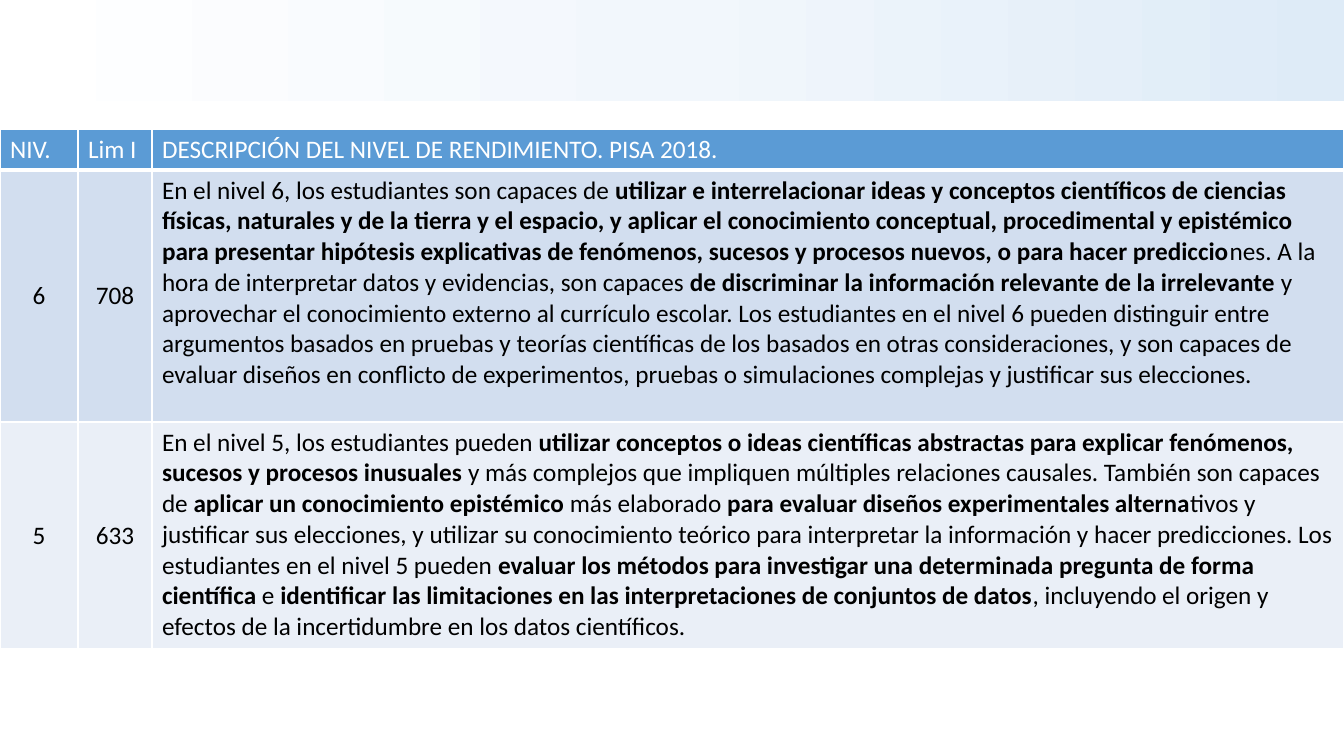
from copy import deepcopy
from dataclasses import dataclass

from lxml.etree import SubElement
from pptx import Presentation
from pptx.dml.color import RGBColor
from pptx.enum.shapes import MSO_SHAPE
from pptx.enum.text import MSO_ANCHOR, PP_ALIGN
from pptx.oxml.ns import qn
from pptx.util import Emu, Pt

SLIDE_W, SLIDE_H = 1344, 756
EMU_PER_PX = 12192000 / SLIDE_W


@dataclass(frozen=True)
class Theme:
    font: str = "Calibri"
    text_size: int = 18
    header_fill: str = "5B9BD5"
    header_text: str = "FFFFFF"
    body_text: str = "000000"
    row_fills: tuple = ("D2DEEF", "EAEFF7")
    border: str = "FFFFFF"
    border_pt: int = 1
    header_rule_pt: int = 3
    band_stops: tuple = ("DEEBF7", "F2F7FC", "FFFFFF")


THEME = Theme()

COLUMN_WIDTHS = (78, 74, 1192)
ROW_HEIGHTS = (41, 252, 227)
HEADINGS = ("NIV.", "Lim I", "DESCRIPCIÓN DEL NIVEL DE RENDIMIENTO. PISA 2018.")

# Each description alternates regular and bold passages, starting with regular.
LEVELS = (
    ("6", "708", (
        "En el nivel 6, los estudiantes son capaces de ",
        "utilizar e interrelacionar ideas y conceptos científicos de ciencias físicas, "
        "naturales y de la tierra y el espacio, y aplicar el conocimiento conceptual, "
        "procedimental y epistémico para presentar hipótesis explicativas de fenómenos, "
        "sucesos y procesos nuevos, o para hacer prediccio",
        "nes. A la hora de interpretar datos y evidencias, son capaces ",
        "de discriminar la información relevante de la irrelevante",
        " y aprovechar el conocimiento externo al currículo escolar. Los estudiantes en el "
        "nivel 6 pueden distinguir entre argumentos basados en pruebas y teorías científicas "
        "de los basados en otras consideraciones, y son capaces de evaluar diseños en "
        "conflicto de experimentos, pruebas o simulaciones complejas y justificar sus "
        "elecciones.",
    )),
    ("5", "633", (
        "En el nivel 5, los estudiantes pueden ",
        "utilizar conceptos o ideas científicas abstractas para explicar fenómenos, sucesos "
        "y procesos inusuales ",
        "y más complejos que impliquen múltiples relaciones causales. También son capaces de ",
        "aplicar un conocimiento epistémico ",
        "más elaborado",
        " para evaluar diseños experimentales alterna",
        "tivos y justificar sus elecciones, y utilizar su conocimiento teórico para "
        "interpretar la información y hacer predicciones. Los estudiantes en el nivel 5 pueden ",
        "evaluar los métodos para investigar una determinada pregunta de forma científica ",
        "e ",
        "identificar las limitaciones en las interpretaciones de conjuntos de datos",
        ", incluyendo el origen y efectos de la incertidumbre en los datos científicos.",
    )),
)


def px(length):
    return Emu(round(length * EMU_PER_PX))


def add_gradient_band(slide, left, top, width, height):
    band = slide.shapes.add_shape(
        MSO_SHAPE.RECTANGLE, px(left), px(top), px(width), px(height))
    band.shadow.inherit = False
    band.line.fill.background()
    band.fill.gradient()
    band.fill.gradient_angle = 180
    # The default gradient has two stops; a third is inserted between them.
    stop_list = band._element.spPr.find(qn("a:gradFill")).find(qn("a:gsLst"))
    stop_list.insert(1, deepcopy(stop_list[0]))
    for index, (stop, color) in enumerate(zip(band.fill.gradient_stops, THEME.band_stops)):
        stop.position = index / 2
        stop.color.rgb = RGBColor.from_string(color)


def set_borders(cell, bottom_pt):
    properties = cell._tc.get_or_add_tcPr()
    for index, side in enumerate("LRTB"):
        width = bottom_pt if side == "B" else THEME.border_pt
        line = SubElement(properties, qn(f"a:ln{side}"), w=str(Pt(width)))
        fill = SubElement(line, qn("a:solidFill"))
        SubElement(fill, qn("a:srgbClr"), val=THEME.border)
        properties.insert(index, line)


def fill_cell(cell, passages, fill, color, centered=False, bottom_pt=THEME.border_pt):
    """Write passages alternating regular and bold, then style the cell."""
    cell.fill.solid()
    cell.fill.fore_color.rgb = RGBColor.from_string(fill)
    set_borders(cell, bottom_pt)
    paragraph = cell.text_frame.paragraphs[0]
    if centered:
        cell.vertical_anchor = MSO_ANCHOR.MIDDLE
        paragraph.alignment = PP_ALIGN.CENTER
    for index, passage in enumerate(passages):
        run = paragraph.add_run()
        run.text = passage
        run.font.name = THEME.font
        run.font.size = Pt(THEME.text_size)
        run.font.bold = index % 2 == 1
        run.font.color.rgb = RGBColor.from_string(color)


def add_levels_table(slide, left, top):
    levels = slide.shapes.add_table(
        len(ROW_HEIGHTS), len(COLUMN_WIDTHS), px(left), px(top),
        px(sum(COLUMN_WIDTHS)), px(sum(ROW_HEIGHTS))).table
    levels.first_row = levels.horz_banding = False
    for column, width in zip(levels.columns, COLUMN_WIDTHS):
        column.width = px(width)
    for row, height in zip(levels.rows, ROW_HEIGHTS):
        row.height = px(height)

    for column, heading in enumerate(HEADINGS):
        fill_cell(levels.cell(0, column), (heading,), THEME.header_fill,
                  THEME.header_text, bottom_pt=THEME.header_rule_pt)
    for row, (level, lower_limit, description) in enumerate(LEVELS, start=1):
        row_fill = THEME.row_fills[row - 1]
        for column, passages in enumerate(((level,), (lower_limit,), description)):
            fill_cell(levels.cell(row, column), passages, row_fill,
                      THEME.body_text, centered=column < 2)


def main():
    presentation = Presentation()
    presentation.slide_width, presentation.slide_height = px(SLIDE_W), px(SLIDE_H)
    slide = presentation.slides.add_slide(presentation.slide_layouts[6])
    add_gradient_band(slide, 0, 0, SLIDE_W, 101)
    add_levels_table(slide, 0, 129)
    presentation.save("out.pptx")


if __name__ == "__main__":
    main()
